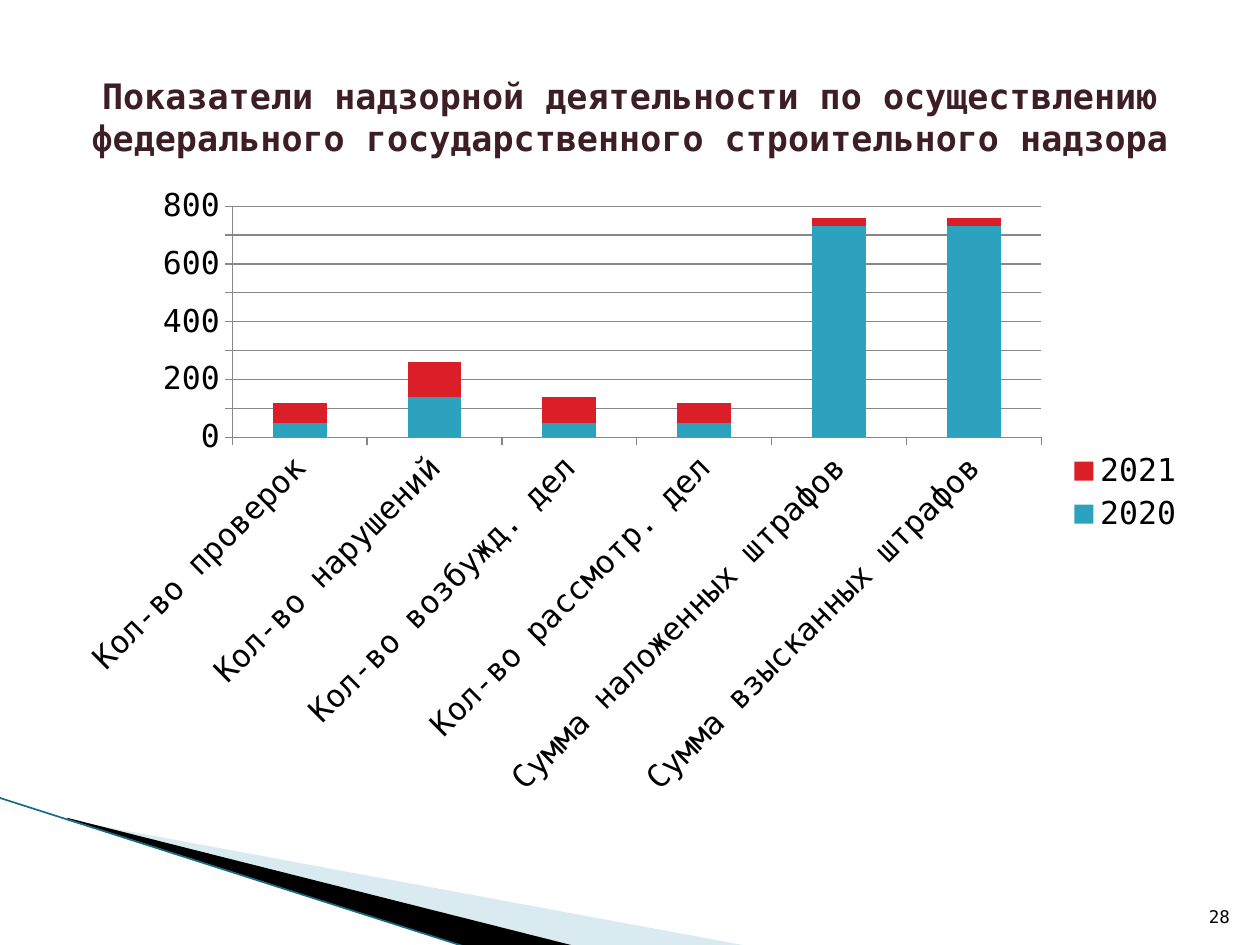
from lxml.etree import SubElement
from pptx import Presentation
from pptx.chart.data import CategoryChartData
from pptx.dml.color import RGBColor
from pptx.enum.chart import XL_CHART_TYPE as ChartType, XL_LEGEND_POSITION as LegendPosition
from pptx.enum.chart import XL_TICK_MARK as TickMark
from pptx.enum.shapes import MSO_CONNECTOR as Connector
from pptx.enum.text import MSO_ANCHOR as Anchor, PP_ALIGN as Align
from pptx.oxml.ns import qn
from pptx.util import Inches, Pt

FONT = "DejaVu Sans Mono"
BLACK = RGBColor(0x00, 0x00, 0x00)
PLUM = RGBColor(0x3E, 0x1E, 0x25)
TEAL = RGBColor(0x2D, 0xA2, 0xBF)
RED = RGBColor(0xDA, 0x1F, 0x28)
PALE_BLUE = RGBColor(0xA0, 0xCB, 0xDC)
DARK_TEAL = RGBColor(0x16, 0x6C, 0x80)
GRAY = RGBColor(0x87, 0x87, 0x87)

TITLE = ("Показатели надзорной деятельности по осуществлению "
         "федерального государственного строительного надзора")
CATEGORIES = ["Кол-во проверок", "Кол-во нарушений", "Кол-во возбужд. дел",
              "Кол-во рассмотр. дел", "Сумма наложенных штрафов",
              "Сумма взысканных штрафов"]
SERIES = [("2020", [50, 140, 50, 50, 730, 730], TEAL),
          ("2021", [70, 120, 90, 70, 30, 30], RED)]


def set_font(font, size, color, bold=False):
    font.name = FONT
    font.size = Pt(size)
    font.bold = bold
    font.color.rgb = color


def add_wedge(slide, points, color, opacity=100):
    corners = [(Inches(x), Inches(y)) for x, y in points]
    builder = slide.shapes.build_freeform(*corners[0])
    builder.add_line_segments(corners[1:], close=True)
    shape = builder.convert_to_shape()
    shape.shadow.inherit = False
    shape.line.fill.background()
    shape.fill.solid()
    shape.fill.fore_color.rgb = color
    if opacity < 100:
        color_element = shape.fill._xPr.find(".//" + qn("a:srgbClr"))
        SubElement(color_element, qn("a:alpha"), val=str(opacity * 1000))


def add_line(slide, start, end, color, width):
    line = slide.shapes.add_connector(
        Connector.STRAIGHT, *(Inches(value) for value in start + end))
    line.line.color.rgb = color
    line.line.width = Pt(width)
    SubElement(line._element.spPr, qn("a:effectLst"))


def add_text(slide, box, text, size, color, alignment, anchor, bold=False):
    shape = slide.shapes.add_textbox(*(Inches(value) for value in box))
    frame = shape.text_frame
    frame.word_wrap = True
    frame.vertical_anchor = anchor
    paragraph = frame.paragraphs[0]
    paragraph.text = text
    paragraph.alignment = alignment
    set_font(paragraph.font, size, color, bold)


def add_stacked_chart(slide, box):
    data = CategoryChartData()
    data.categories = CATEGORIES
    for name, values, _ in SERIES:
        data.add_series(name, values)
    chart = slide.shapes.add_chart(
        ChartType.COLUMN_STACKED, *(Inches(value) for value in box), data).chart
    set_font(chart.font, 18, BLACK)
    chart.has_title = False
    chart.has_legend = True
    chart.legend.position = LegendPosition.RIGHT
    chart.legend.include_in_layout = False

    plot = chart.plots[0]
    plot.gap_width = 150
    plot.overlap = 100
    plot.vary_by_categories = False
    for series, (_, _, color) in zip(plot.series, SERIES):
        series.format.fill.solid()
        series.format.fill.fore_color.rgb = color

    value_axis = chart.value_axis
    value_axis.minimum_scale = 0
    value_axis.maximum_scale = 800
    value_axis.major_unit = 100
    value_axis.has_major_gridlines = True
    value_axis.major_gridlines.format.line.color.rgb = GRAY
    for axis in (chart.category_axis, value_axis):
        axis.major_tick_mark = TickMark.OUTSIDE
        axis.minor_tick_mark = TickMark.NONE
        axis.format.line.color.rgb = GRAY


def main():
    presentation = Presentation()
    presentation.slide_width = Inches(10)
    presentation.slide_height = Inches(7.5)
    slide = presentation.slides.add_slide(presentation.slide_layouts[6])

    add_wedge(slide, [(0.55, 6.51), (5.95, 7.51), (4.56, 7.51), (0.55, 6.5)],
              PALE_BLUE, opacity=40)
    add_wedge(slide, [(0.53, 6.49), (4.57, 7.51), (3.72, 7.52), (0.54, 6.5)], BLACK)
    add_line(slide, (-0.01, 6.33), (3.71, 7.52), DARK_TEAL, 0.95)
    add_stacked_chart(slide, (0.5, 1.39, 9, 5.04))
    add_text(slide, (9.36, 7.01, 0.5, 0.4), "28", 10, BLACK, Align.RIGHT, Anchor.BOTTOM)
    add_text(slide, (0.5, 0.3, 9, 1.25), TITLE, 20, PLUM, Align.CENTER, Anchor.MIDDLE,
             bold=True)
    presentation.save("out.pptx")


if __name__ == "__main__":
    main()
